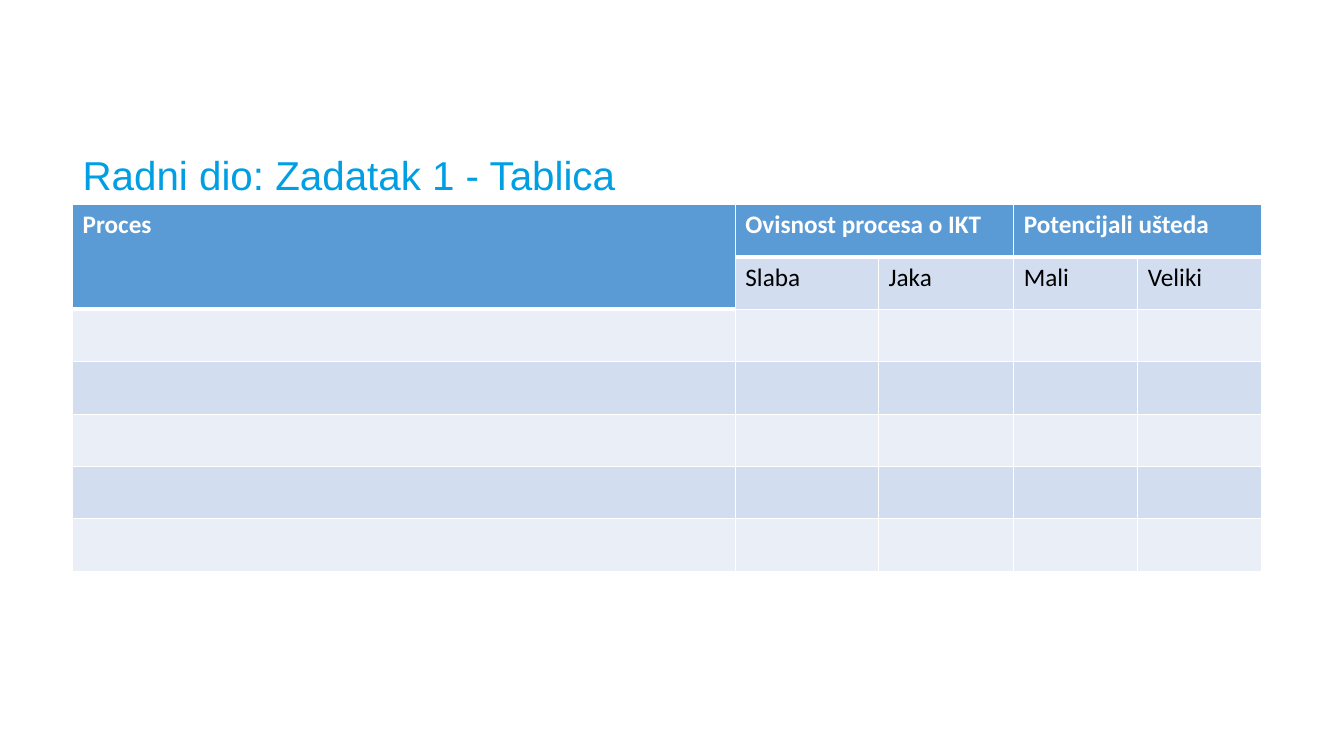
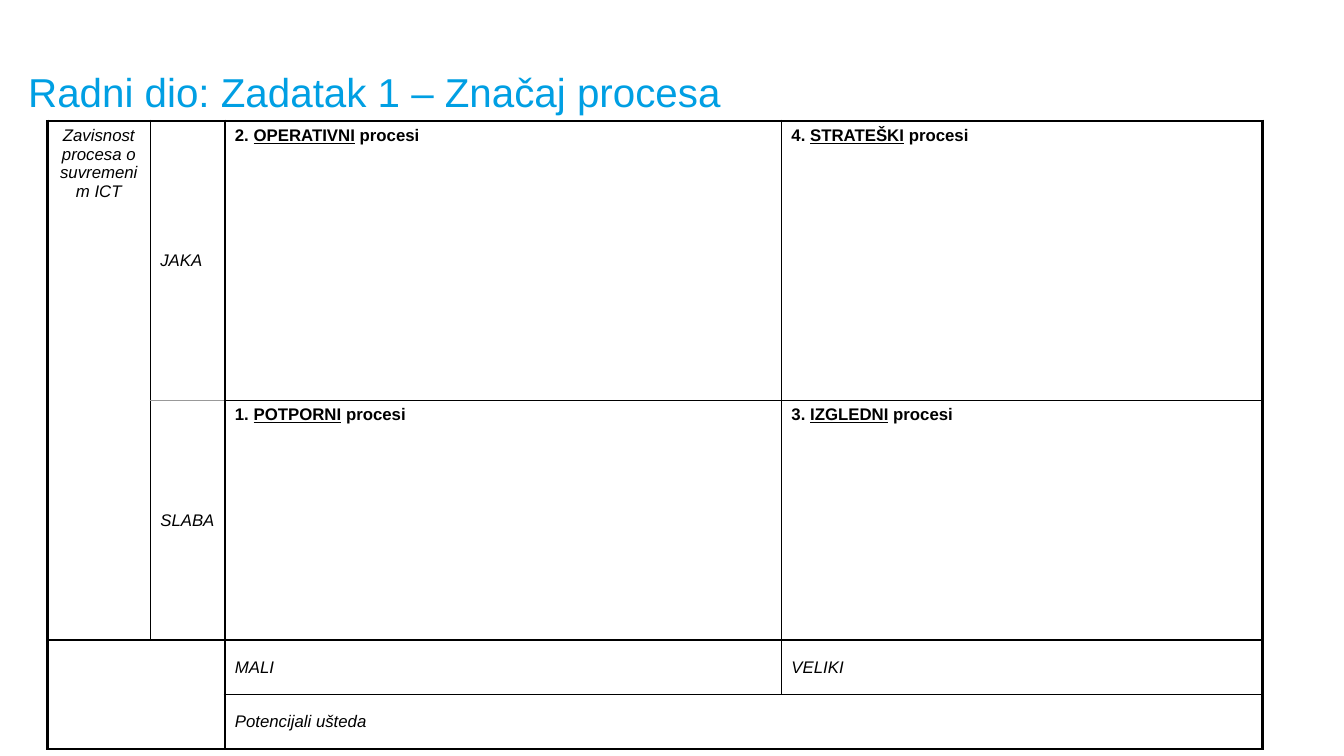
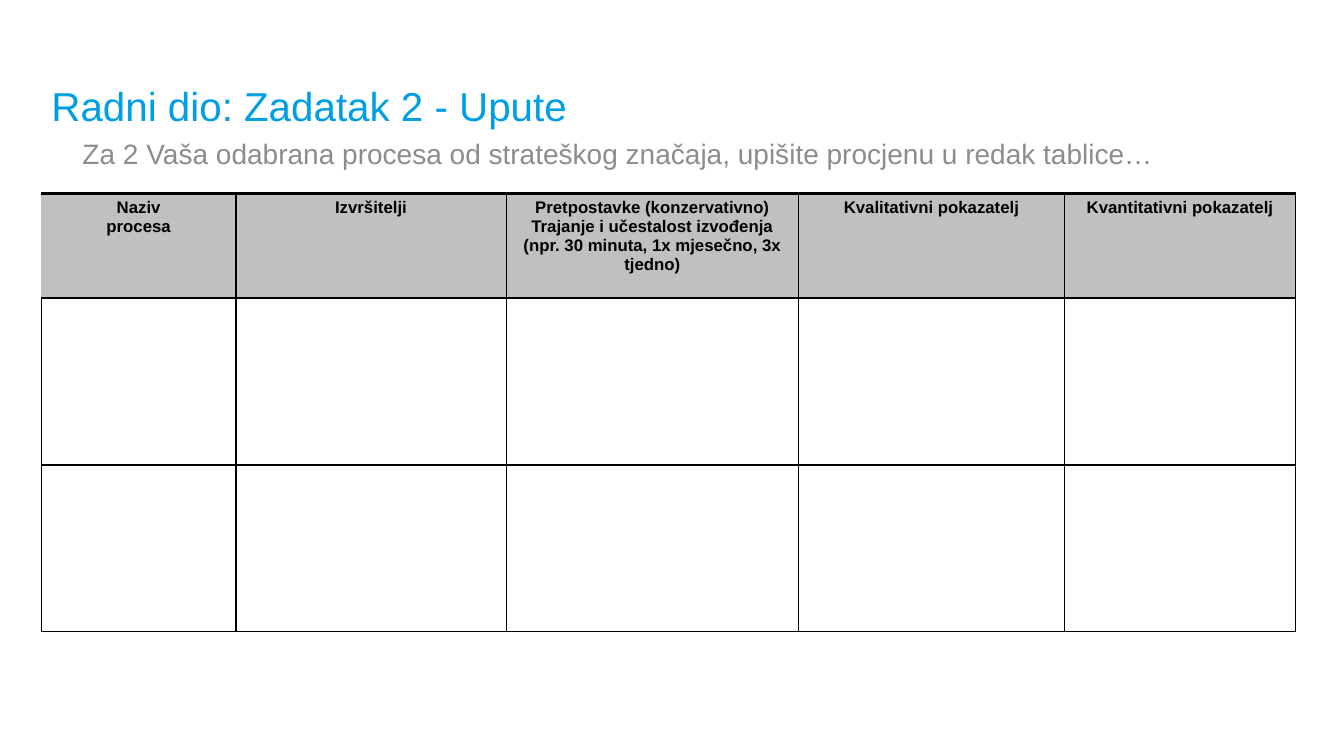
import dataclasses

import pptx
import pptx.dml.color
import pptx.enum.text
import pptx.util
from lxml import etree
from pptx.oxml.ns import qn

Pt = pptx.util.Pt
Color = pptx.dml.color.RGBColor.from_string
Align = pptx.enum.text.PP_ALIGN
Anchor = pptx.enum.text.MSO_ANCHOR


@dataclasses.dataclass(frozen=True)
class Theme:
    title = dict(name="Arial", size=Pt(28.8), color="009FE3")
    lead = dict(name="Arial", size=Pt(20), color="8C8C8C")
    head = dict(name="Calibri", size=Pt(18), bold=True, color="FFFFFF")
    body = dict(name="Calibri", size=Pt(18), bold=False, color="000000")
    strong = dict(name="Arial", size=Pt(12), bold=True, color="000000")
    axis = dict(name="Arial", size=Pt(12), italic=True, color="000000")
    blue = "5B9BD5"
    bands = ("EAEFF7", "D2DEEF")
    gray = "C0C0C0"
    white = "FFFFFF"
    # One letter per cell edge: colour and width in points
    rules = {
        "0": None,
        "1": ("000000", 1),
        "2": ("000000", 2),
        "g": ("999999", 1),
        "w": ("FFFFFF", 1),
        "W": ("FFFFFF", 3),
    }


THEME = Theme()
WIDE, HIGH = pptx.util.Inches(13.33), pptx.util.Inches(7.5)
BAND = 7.73  # height of a title or lead line, percent of the slide


def scale(box):
    """Turn a box in percent of the slide into slide units."""
    return [round(part * full / 100) for part, full in zip(box, (WIDE, HIGH) * 2)]


def style(font, look):
    for key, value in look.items():
        if key == "color":
            font.color.rgb = Color(value)
        else:
            setattr(font, key, value)


def write(frame, text, look, align=Align.LEFT, space=None):
    """Fill a frame: one paragraph per line, _underlined_ between marks."""
    for num, line in enumerate(text.split("\n")):
        para = frame.add_paragraph() if num else frame.paragraphs[0]
        para.alignment, para.line_spacing = align, space
        for odd, part in enumerate(line.split("_")):
            if part:
                run = para.add_run()
                run.text = part
                style(run.font, look)
                if odd % 2:
                    run.font.underline = True


def place(shape, box, text, look, anchor):
    shape.left, shape.top, shape.width, shape.height = scale(box)
    frame = shape.text_frame
    traits = dict(
        word_wrap=True,
        auto_size=pptx.enum.text.MSO_AUTO_SIZE.NONE,
        vertical_anchor=anchor,
    )
    for key, value in traits.items():
        setattr(frame, key, value)
    write(frame, text, look, space=0.9)


def page(deck, left, top, title):
    slide = deck.slides.add_slide(deck.slide_layouts[5])
    place(slide.shapes.title, (left, top, 86.27, BAND), title, THEME.title, Anchor.BOTTOM)
    return slide


def grid(slide, box, cols, rows):
    """Add a plain table whose columns and rows share the box by weight."""
    left, top, width, height = scale(box)
    table = slide.shapes.add_table(len(rows), len(cols), left, top, width, height).table
    table.first_row = table.horz_banding = False
    for col, part in zip(table.columns, cols):
        col.width = round(width * part / sum(cols))
    for row, part in zip(table.rows, rows):
        row.height = round(height * part / sum(rows))
    return table


def edge(cell, rules):
    """Draw the left, top, right and bottom edges named by four letters."""
    props = cell._tc.get_or_add_tcPr()
    sides = dict(zip("LTRB", rules))
    for side in "LRTB":
        rule = THEME.rules[sides[side]]
        line = etree.SubElement(props, qn("a:ln" + side), w=str(Pt(rule[1]) if rule else 0))
        if rule:
            paint = etree.SubElement(line, qn("a:solidFill"))
            etree.SubElement(paint, qn("a:srgbClr"), val=rule[0])
        else:
            etree.SubElement(line, qn("a:noFill"))


def fill(table, row, col, rules, tint, text="", look=None, span=(1, 1),
         align=Align.LEFT, anchor=Anchor.TOP):
    cell = table.cell(row, col)
    if span != (1, 1):
        cell.merge(table.cell(row + span[0] - 1, col + span[1] - 1))
    edge(cell, rules)
    cell.fill.solid()
    cell.fill.fore_color.rgb = Color(tint)
    cell.vertical_anchor = anchor
    if text:
        write(cell.text_frame, text, look, align)


def tally(slide, box):
    """Table of processes by dependence and savings."""
    table = grid(slide, box, (657, 142, 134, 123, 123), [1] * 7)
    heads = (
        (0, "Proces", (2, 1)),
        (1, "Ovisnost procesa o IKT", (1, 2)),
        (3, "Potencijali ušteda", (1, 2)),
    )
    for col, text, span in heads:
        fill(table, 0, col, "wwwW", THEME.blue, text, THEME.head, span)
    for col, text in enumerate(("Slaba", "Jaka", "Mali", "Veliki"), 1):
        fill(table, 1, col, "wwww", THEME.bands[1], text, THEME.body)
    for row in range(2, 7):
        for col in range(5):
            fill(table, row, col, "wwww", THEME.bands[row % 2])


def matrix(slide, box):
    """Two by two field of process types with its axis labels."""
    table = grid(slide, box, (102, 74, 552, 477), (277, 238, 54, 54))
    fields = (
        (0, 2, "2211", "2. _OPERATIVNI_ procesi"),
        (0, 3, "1221", "4. _STRATEŠKI_ procesi"),
        (1, 2, "2112", "1. _POTPORNI_ procesi"),
        (1, 3, "1121", "3. _IZGLEDNI_ procesi"),
    )
    for row, col, rules, text in fields:
        fill(table, row, col, rules, THEME.white, text, THEME.strong)
    labels = (
        (0, 1, "122g", "JAKA", (1, 1)),
        (1, 1, "1g22", "SLABA", (1, 1)),
        (2, 2, "2211", "MALI", (1, 1)),
        (2, 3, "1121", "VELIKI", (1, 1)),
        (3, 2, "2122", "Potencijali ušteda", (1, 2)),
    )
    for row, col, rules, text, span in labels:
        fill(table, row, col, rules, THEME.white, text, THEME.axis, span, anchor=Anchor.MIDDLE)
    fill(table, 0, 0, "2212", THEME.white, "Zavisnost procesa o suvremenim ICT",
         THEME.axis, (2, 1), Align.CENTER)
    fill(table, 2, 0, "2222", THEME.white, span=(2, 2))


def sheet(slide, box):
    """Blank form with a gray heading row."""
    table = grid(slide, box, (193, 268, 290, 264, 229), (104, 166, 166))
    heads = (
        "Naziv\nprocesa",
        "Izvršitelji",
        "Pretpostavke (konzervativno)\nTrajanje i učestalost izvođenja "
        "(npr. 30 minuta, 1x mjesečno, 3x tjedno)",
        "Kvalitativni pokazatelj",
        "Kvantitativni pokazatelj",
    )
    for col, text in enumerate(heads):
        fill(table, 0, col, "1211" if col else "0211", THEME.gray, text,
             THEME.strong, align=Align.CENTER)
        for row in (1, 2):
            fill(table, row, col, "1111", THEME.white)


def main():
    deck = pptx.Presentation()
    deck.slide_width, deck.slide_height = WIDE, HIGH

    top = 19.33
    slide = page(deck, 5.4, top, "Radni dio: Zadatak 1 - Tablica")
    tally(slide, (5.4, top + BAND, 88.5, 48.53))

    top = 8.27
    slide = page(deck, 1.35, top, "Radni dio: Zadatak 1 – Značaj procesa")
    matrix(slide, (3.53, top + BAND, 90.4, 83.07))

    top = 10.13
    slide = page(deck, 3.08, top, "Radni dio: Zadatak 2 - Upute")
    lead = (5.4, top + BAND, 86.27, BAND)
    place(slide.shapes.add_textbox(*scale(lead)), lead,
          "Za 2 Vaša odabrana procesa od strateškog značaja, upišite procjenu u redak tablice…",
          THEME.lead, Anchor.TOP)
    sheet(slide, (3.08, top + 2 * BAND, 93.32, 58))

    deck.save("out.pptx")


if __name__ == "__main__":
    main()
